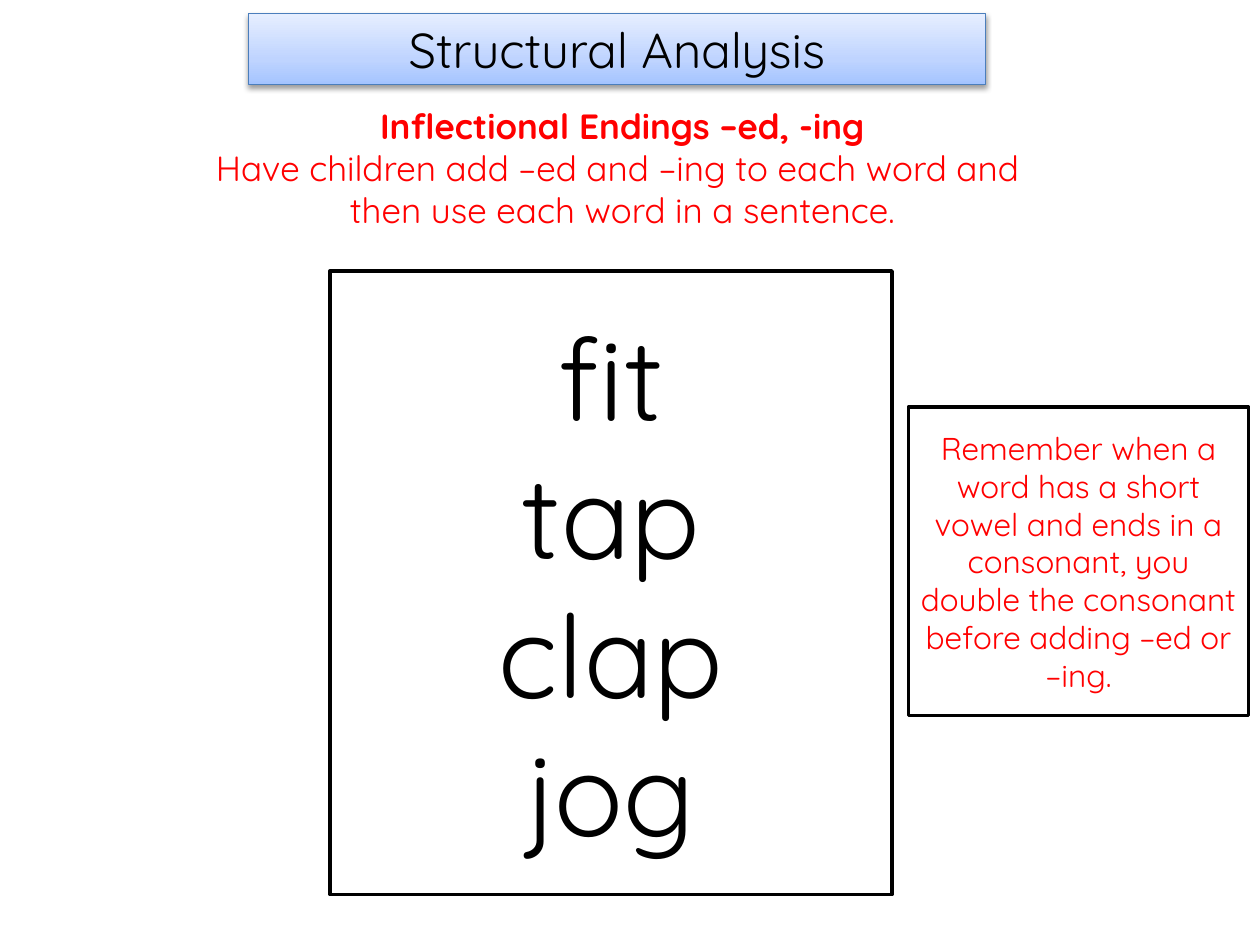
from copy import deepcopy
from dataclasses import dataclass

from lxml.etree import SubElement
from pptx import Presentation
from pptx.dml.color import RGBColor
from pptx.enum.shapes import MSO_SHAPE
from pptx.enum.text import MSO_ANCHOR, MSO_AUTO_SIZE, PP_ALIGN
from pptx.oxml.ns import qn
from pptx.util import Inches, Pt


@dataclass(frozen=True)
class Theme:
    font: str = "Quicksand"
    black: RGBColor = RGBColor(0, 0, 0)
    white: RGBColor = RGBColor(255, 255, 255)
    red: RGBColor = RGBColor(255, 0, 0)
    banner_line: RGBColor = RGBColor.from_string("4B7EBC")
    banner_stops: tuple = ((0, "A4C4FF"), (0.35, "BFD4FF"), (1, "E6EEFF"))
    title_size: int = 28
    directions_size: int = 20
    word_size: int = 66
    reminder_size: int = 18


theme = Theme()


def write_lines(shape, lines, size, color, anchor=MSO_ANCHOR.MIDDLE):
    """Fill a shape with centred paragraphs, one for each line."""
    frame = shape.text_frame
    frame.word_wrap = True
    frame.vertical_anchor = anchor
    frame.text = "\n".join(lines)
    for para in frame.paragraphs:
        para.alignment = PP_ALIGN.CENTER
        for span in para.runs:
            span.font.name = theme.font
            span.font.size = Pt(size)
            span.font.color.rgb = color


deck = Presentation()
deck.slide_width, deck.slide_height = Inches(10), Inches(7.5)
page = deck.slides.add_slide(deck.slide_layouts[5])

# Title banner
title = page.shapes.title
title.left, title.top = Inches(1.97), Inches(0.11)
title.width, title.height = Inches(5.85), Inches(0.56)
write_lines(title, ["Structural Analysis"], theme.title_size, theme.black)
title.text_frame.auto_size = MSO_AUTO_SIZE.NONE

title.fill.gradient()
title.fill.gradient_angle = 90
first_stop = title.fill._fill.gradient_stops[0]._gs
first_stop.addnext(deepcopy(first_stop))
for stop, (position, color) in zip(title.fill.gradient_stops, theme.banner_stops):
    stop.position = position
    stop.color.rgb = RGBColor.from_string(color)
title.line.color.rgb = theme.banner_line
title.line.width = Pt(0.75)

effects = SubElement(title._element.spPr, qn("a:effectLst"))
shadow = SubElement(effects, qn("a:outerShdw"), blurRad=str(Pt(3.1)),
                    dist=str(Pt(1.6)), dir="5400000", rotWithShape="0")
shadow_color = SubElement(shadow, qn("a:srgbClr"), val=str(theme.black))
SubElement(shadow_color, qn("a:alpha"), val="38000")

# Directions
directions = page.shapes.add_textbox(Inches(0.08), Inches(0.78), Inches(9.72), Inches(1.11))
write_lines(directions, [
    "Inflectional Endings –ed, -ing",
    "Have children add –ed and –ing to each word and ",
    "then use each word in a sentence.",
], theme.directions_size, theme.red, MSO_ANCHOR.TOP)
directions.text_frame.paragraphs[0].runs[0].font.bold = True

# Word list and reminder
reminder = ("Remember when a word has a short vowel and ends in a consonant, "
            "you double the consonant before adding –ed or –ing.")
boxes = [
    ((2.62, 2.15, 4.46, 4.95), ["fit", "tap", "clap", "jog"], theme.word_size, theme.black),
    ((7.21, 3.23, 2.7, 2.45), [reminder], theme.reminder_size, theme.red),
]
for place, lines, size, color in boxes:
    box = page.shapes.add_shape(MSO_SHAPE.RECTANGLE, *map(Inches, place))
    box.shadow.inherit = False
    box.fill.solid()
    box.fill.fore_color.rgb = theme.white
    box.line.color.rgb = theme.black
    box.line.width = Pt(2)
    write_lines(box, lines, size, color)

deck.save("out.pptx")
